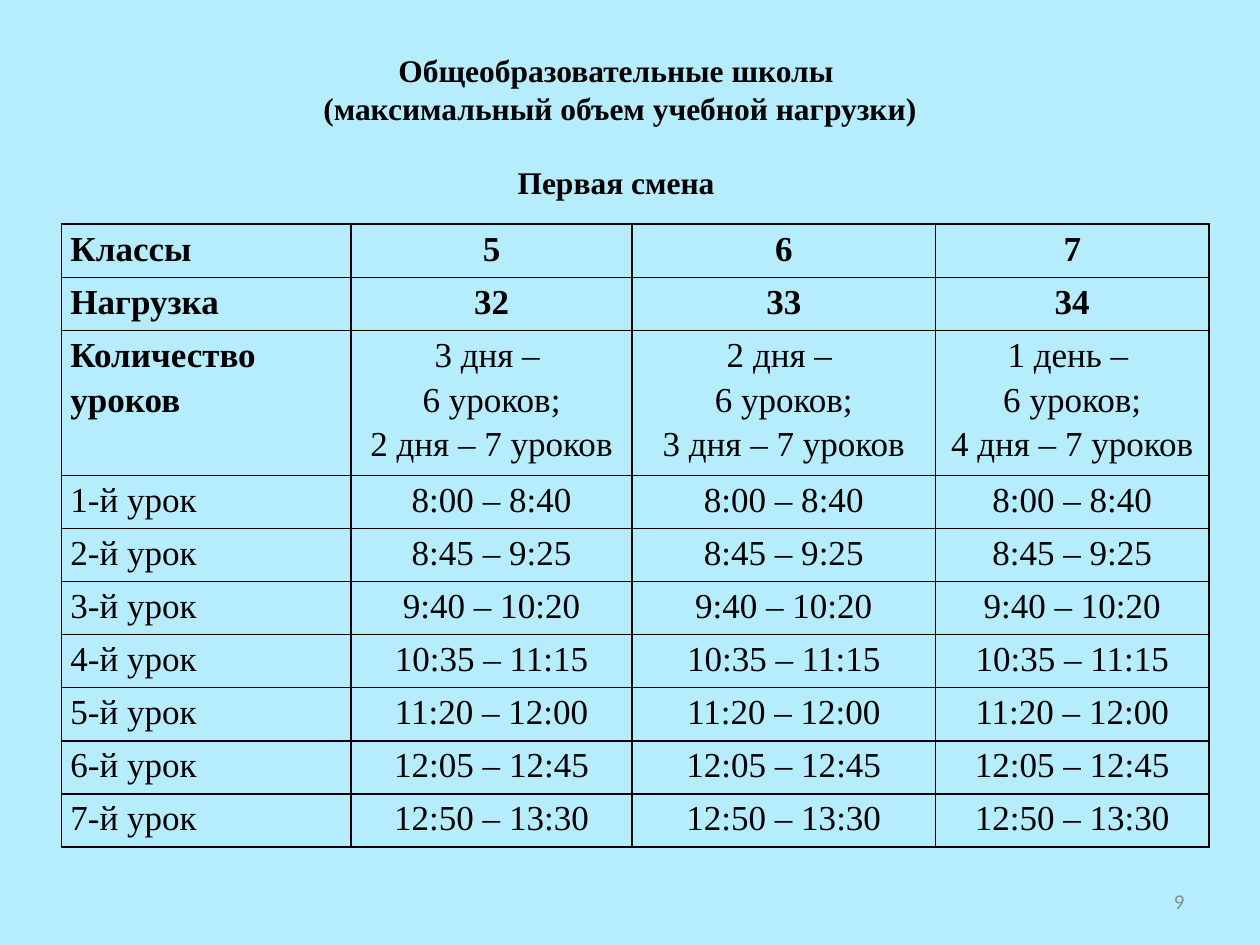
from dataclasses import dataclass

from lxml.etree import SubElement
from pptx import Presentation
from pptx.dml.color import RGBColor as Rgb
from pptx.enum.text import MSO_ANCHOR as Anchor, PP_ALIGN as Align
from pptx.oxml.ns import qn
from pptx.util import Cm, Pt


@dataclass(frozen=True)
class Theme:
    background: str = "B5EDFD"
    ink: str = "000000"
    muted: str = "8C8C8C"
    serif: str = "Times New Roman"
    sans: str = "Calibri"
    heading_size: int = 18
    table_size: int = 20
    number_size: int = 12
    border_width: int = 1


THEME = Theme()

HEADING = "Общеобразовательные школы\n (максимальный объем учебной нагрузки)\nПервая смена"
LESSON_TIMES = ["8:00 – 8:40", "8:45 – 9:25", "9:40 – 10:20", "10:35 – 11:15",
                "11:20 – 12:00", "12:05 – 12:45", "12:50 – 13:30"]
WORKLOAD = [
    ["Классы", "5", "6", "7"],
    ["Нагрузка", "32", "33", "34"],
    ["Количество уроков",
     "3 дня – \n6 уроков;\n2 дня – 7 уроков",
     "2 дня – \n6 уроков;\n3 дня – 7 уроков",
     "1 день – \n6 уроков;\n4 дня – 7 уроков"],
]
COLUMN_WIDTHS = [5.84, 5.66, 6.12, 5.51]
ROW_HEIGHT, LESSON_COUNT_HEIGHT = 1.07, 2.74
LESSON_COUNT_ROW = 2


def write(frame, text, size, font, color, align, bold=False, spacing=None):
    frame.text = text
    for paragraph in frame.paragraphs:
        paragraph.alignment = align
        paragraph.line_spacing = spacing
        for run in paragraph.runs:
            run.font.size = Pt(size)
            run.font.name = font
            run.font.bold = bold
            run.font.color.rgb = Rgb.from_string(color)


def add_text(slide, left, top, width, height, *text_style, **options):
    frame = slide.shapes.add_textbox(Cm(left), Cm(top), Cm(width), Cm(height)).text_frame
    frame.word_wrap = True
    write(frame, *text_style, **options)
    return frame


def add_borders(cell):
    properties = cell._tc.get_or_add_tcPr()
    for position, side in enumerate(("lnL", "lnR", "lnT", "lnB")):
        line = SubElement(properties, qn(f"a:{side}"), w=str(Pt(THEME.border_width)))
        fill = SubElement(line, qn("a:solidFill"))
        SubElement(fill, qn("a:srgbClr"), val=THEME.ink)
        properties.insert(position, line)  # borders come before the cell fill


def fill_cell(cell, text, align, bold):
    cell.margin_left = cell.margin_right = Cm(0.18)
    cell.margin_top = cell.margin_bottom = 0
    cell.fill.background()
    write(cell.text_frame, text, THEME.table_size, THEME.serif, THEME.ink,
          align, bold=bold, spacing=1.15)
    add_borders(cell)


def add_schedule(slide, left, top):
    lessons = [[f"{number}-й урок"] + [time] * 3
               for number, time in enumerate(LESSON_TIMES, start=1)]
    rows = WORKLOAD + lessons
    heights = [LESSON_COUNT_HEIGHT if index == LESSON_COUNT_ROW else ROW_HEIGHT
               for index in range(len(rows))]
    schedule = slide.shapes.add_table(
        len(rows), len(COLUMN_WIDTHS), Cm(left), Cm(top),
        Cm(sum(COLUMN_WIDTHS)), Cm(sum(heights))).table
    schedule.first_row = schedule.horz_banding = False

    for column, width in zip(schedule.columns, COLUMN_WIDTHS):
        column.width = Cm(width)
    for r, (texts, height) in enumerate(zip(rows, heights)):
        schedule.rows[r].height = Cm(height)
        for c, text in enumerate(texts):
            bold = r < LESSON_COUNT_ROW or (r == LESSON_COUNT_ROW and c == 0)
            fill_cell(schedule.cell(r, c), text, Align.CENTER if c else Align.LEFT, bold)


def main():
    deck = Presentation()
    deck.slide_width, deck.slide_height = Cm(25.4), Cm(19.05)
    slide = deck.slides.add_slide(deck.slide_layouts[6])
    slide.background.fill.solid()
    slide.background.fill.fore_color.rgb = Rgb.from_string(THEME.background)

    # Page number
    number = add_text(slide, 18.2, 17.66, 5.93, 1.01, "9", THEME.number_size,
                      THEME.sans, THEME.muted, Align.RIGHT)
    number.vertical_anchor = Anchor.MIDDLE

    # Lesson schedule
    add_schedule(slide, 1.24, 4.52)

    # Heading, with the shift set apart by one line
    heading = add_text(slide, 0.84, 0.9, 23.16, 3.33, HEADING, THEME.heading_size,
                       THEME.serif, THEME.ink, Align.CENTER, bold=True)
    heading.paragraphs[-1].space_before = Pt(21)

    deck.save("out.pptx")


if __name__ == "__main__":
    main()
